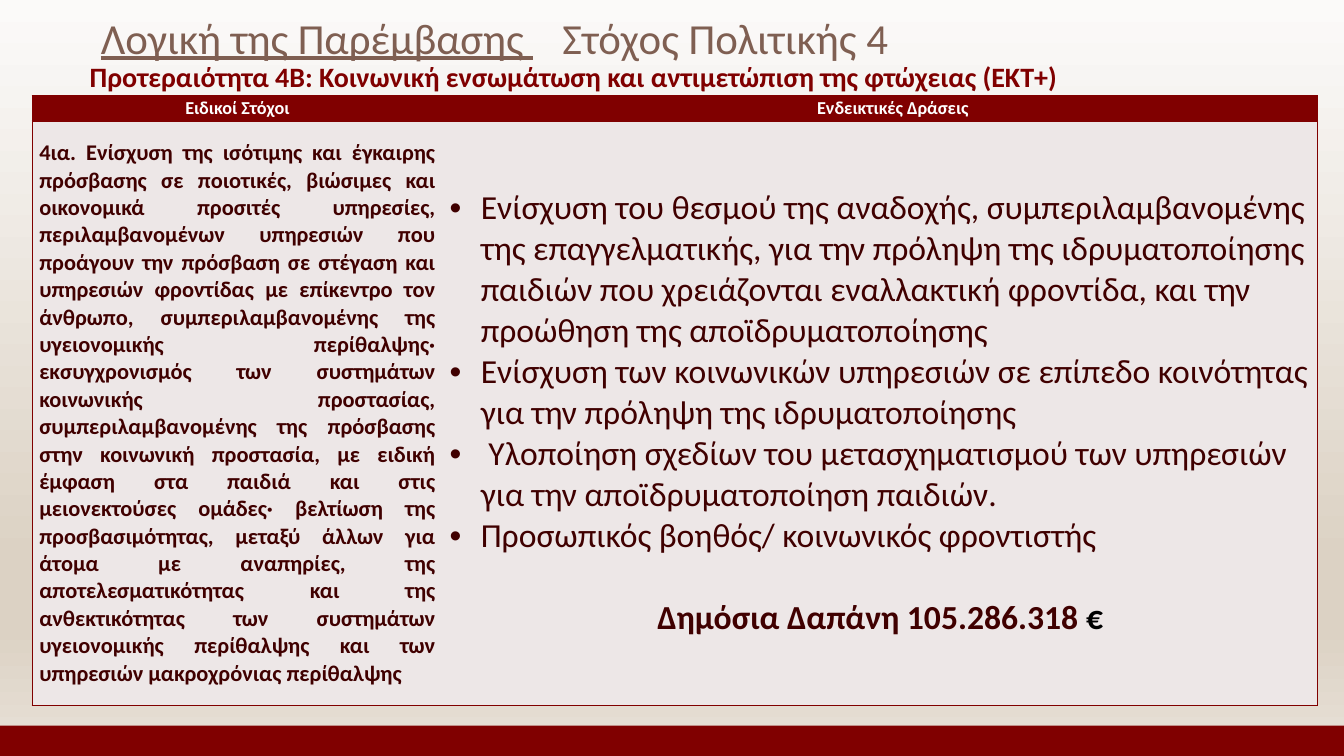
from lxml import etree
from pptx import Presentation
from pptx.dml.color import RGBColor
from pptx.enum.shapes import MSO_SHAPE
from pptx.enum.text import MSO_ANCHOR, MSO_AUTO_SIZE, PP_ALIGN
from pptx.oxml.ns import qn
from pptx.util import Inches, Pt

CENTER, JUSTIFY, LEFT = PP_ALIGN.CENTER, PP_ALIGN.JUSTIFY, PP_ALIGN.LEFT
TOP, MIDDLE, BOTTOM = MSO_ANCHOR.TOP, MSO_ANCHOR.MIDDLE, MSO_ANCHOR.BOTTOM
RECTANGLE, NO_AUTOFIT = MSO_SHAPE.RECTANGLE, MSO_AUTO_SIZE.NONE

COLORS = {
    "maroon": "800000", "title": "7F5F52", "ink": "400000", "cell": "EDE7E7",
    "white": "FFFFFF", "black": "000000",
}
BACKDROP = [(0, "FBFAF9"), (74, "DCD2C4"), (83, "DCD2C4"), (100, "E8E1D8")]
LAYOUT_TITLE_AND_CONTENT = 1

OBJECTIVE = (
    "4ια. Ενίσχυση της ισότιμης και έγκαιρης πρόσβασης σε ποιοτικές, βιώσιμες και "
    "οικονομικά προσιτές υπηρεσίες, περιλαμβανομένων υπηρεσιών που προάγουν την "
    "πρόσβαση σε στέγαση και υπηρεσιών φροντίδας με επίκεντρο τον άνθρωπο, "
    "συμπεριλαμβανομένης της υγειονομικής περίθαλψης· εκσυγχρονισμός των συστημάτων "
    "κοινωνικής προστασίας, συμπεριλαμβανομένης της πρόσβασης στην κοινωνική "
    "προστασία, με ειδική έμφαση στα παιδιά και στις μειονεκτούσες ομάδες· βελτίωση "
    "της προσβασιμότητας, μεταξύ άλλων για άτομα με αναπηρίες, της "
    "αποτελεσματικότητας και της ανθεκτικότητας των συστημάτων υγειονομικής "
    "περίθαλψης και των υπηρεσιών μακροχρόνιας περίθαλψης"
)
ACTIONS = [
    "Ενίσχυση του θεσμού της αναδοχής, συμπεριλαμβανομένης της επαγγελματικής, για "
    "την πρόληψη της ιδρυματοποίησης παιδιών που χρειάζονται εναλλακτική φροντίδα, "
    "και την προώθηση της αποϊδρυματοποίησης",
    "Ενίσχυση των κοινωνικών υπηρεσιών σε επίπεδο κοινότητας για την πρόληψη της "
    "ιδρυματοποίησης",
    " Υλοποίηση σχεδίων του μετασχηματισμού των υπηρεσιών για την "
    "αποϊδρυματοποίηση παιδιών.",
    "Προσωπικός βοηθός/ κοινωνικός φροντιστής",
]


class InterventionSlide:
    """Lengths are percentages of the slide's width and height."""

    font = "Calibri"

    def __init__(self, prs):
        self.width, self.height = prs.slide_width, prs.slide_height
        self.slide = prs.slides.add_slide(prs.slide_layouts[LAYOUT_TITLE_AND_CONTENT])

    def across(self, share):
        return round(self.width * share / 100)

    def down(self, share):
        return round(self.height * share / 100)

    def box(self, left, top, width, height):
        return self.across(left), self.down(top), self.across(width), self.down(height)

    def backdrop(self, stops):
        fill = self.slide.background.fill
        fill.gradient()
        fill.gradient_angle = 270
        stop_list = self.slide.background._cSld.find(".//" + qn("a:gsLst"))
        for old_stop in list(stop_list):
            stop_list.remove(old_stop)
        for percent, color in stops:
            stop = etree.SubElement(stop_list, qn("a:gs"), pos=str(percent * 1000))
            etree.SubElement(stop, qn("a:srgbClr"), val=color)

    def band(self, *area):
        band = self.slide.shapes.add_shape(RECTANGLE, *self.box(*area))
        band.shadow.inherit = False
        band.fill.solid()
        band.fill.fore_color.rgb = RGBColor.from_string(COLORS["maroon"])
        band.line.fill.background()

    def placeholder(self, index, area, anchor):
        holder = self.slide.placeholders[index]
        holder.left, holder.top, holder.width, holder.height = self.box(*area)
        frame = holder.text_frame
        frame.word_wrap = True
        frame.auto_size = NO_AUTOFIT
        frame.vertical_anchor = anchor
        return frame

    def style_run(self, run, size, color, bold=False, underline=False):
        font = run.font
        font.name, font.size, font.bold = self.font, Pt(size), bold
        font.underline = underline
        font.color.rgb = RGBColor.from_string(COLORS[color])

    def paragraph(self, paragraph, text, size, color, bold=False, align=LEFT,
                  indent=0, hanging=0, bullet=None):
        paragraph.text = text
        paragraph.alignment = align
        paragraph.space_before = Pt(0)
        props = paragraph._p.get_or_add_pPr()
        props.set("marL", str(Inches(indent)))
        props.set("indent", str(Inches(-hanging)))
        if bullet:
            etree.SubElement(props, qn("a:buFont"), typeface="Arial")
            etree.SubElement(props, qn("a:buChar"), char=bullet)
        else:
            etree.SubElement(props, qn("a:buNone"))
        for run in paragraph.runs:
            self.style_run(run, size, color, bold)
        return paragraph

    def table(self, area, columns, rows):
        table = self.slide.shapes.add_table(
            len(rows), len(columns), *self.box(*area)).table
        table.first_row = table.horz_banding = False
        for column, share in zip(table.columns, columns):
            column.width = self.across(share)
        for row, share in zip(table.rows, rows):
            row.height = self.down(share)
        return table

    def cell(self, cell, fill, bordered):
        """Fill the cell and draw the borders whose side letters are given."""
        cell.margin_left = cell.margin_right = Inches(0.07)
        cell.margin_top = cell.margin_bottom = 0
        cell.vertical_anchor = MIDDLE
        props = cell._tc.get_or_add_tcPr()
        for side in "LRTB":
            line = etree.SubElement(props, qn("a:ln" + side), w=str(Pt(1)))
            if side in bordered:
                paint = etree.SubElement(line, qn("a:solidFill"))
                etree.SubElement(paint, qn("a:srgbClr"), val=COLORS["maroon"])
            else:
                etree.SubElement(line, qn("a:noFill"))
        cell.fill.solid()
        cell.fill.fore_color.rgb = RGBColor.from_string(COLORS[fill])
        return cell.text_frame


def main():
    prs = Presentation()
    prs.slide_width, prs.slide_height = Inches(13.33), Inches(7.5)
    page = InterventionSlide(prs)
    page.backdrop(BACKDROP)
    page.band(0, 96, 100, 4)

    title = page.placeholder(0, (6.75, 1.33, 82.3, 7.73), BOTTOM).paragraphs[0]
    page.paragraph(title, "Λογική της Παρέμβασης", 30.6, "title")
    title.line_spacing = 0.9
    title.runs[0].font.underline = True
    for text, underline in ((" ", True), ("Στόχος Πολιτικής 4", False)):
        part = title.add_run()
        part.text = text
        page.style_run(part, 30.6, "title", underline=underline)
    # Widen the underlined gap between the two halves of the title
    title.runs[1].font._element.set("spc", "2070")

    priority = page.placeholder(1, (5.55, 7.73, 76.9, 6), TOP).paragraphs[0]
    page.paragraph(
        priority,
        "Προτεραιότητα 4Β: Κοινωνική ενσωμάτωση και αντιμετώπιση της φτώχειας (ΕΚΤ+)",
        20, "maroon", bold=True, align=JUSTIFY, indent=0.05)
    priority.line_spacing = 0.9

    table = page.table((2.4, 12.67, 95.65, 80.66), (30.53, 65.12), (3.33, 77.33))
    headings = (("Ειδικοί Στόχοι", "LTB", 0), ("Ενδεικτικές Δράσεις", "RTB", 0.25))
    for column, (heading, borders, indent) in enumerate(headings):
        header = page.cell(table.cell(0, column), "maroon", borders)
        page.paragraph(header.paragraphs[0], heading, 13, "white", bold=True,
                       align=CENTER, indent=indent)

    objective = page.cell(table.cell(1, 0), "cell", "LTB")
    page.paragraph(objective.paragraphs[0], OBJECTIVE, 16, "ink", bold=True,
                   align=JUSTIFY)

    actions = page.cell(table.cell(1, 1), "cell", "RTB")
    for number, action in enumerate(ACTIONS):
        item = actions.add_paragraph() if number else actions.paragraphs[0]
        page.paragraph(item, action, 24, "ink", indent=0.31, hanging=0.31, bullet="•")
    spending = page.paragraph(actions.add_paragraph(), "Δημόσια Δαπάνη 105.286.318 ",
                              24, "ink", bold=True, align=CENTER)
    spending.space_before = Pt(29.3)
    euro = spending.add_run()
    euro.text = "€"
    page.style_run(euro, 24, "black", bold=True)

    prs.save("out.pptx")


if __name__ == "__main__":
    main()
